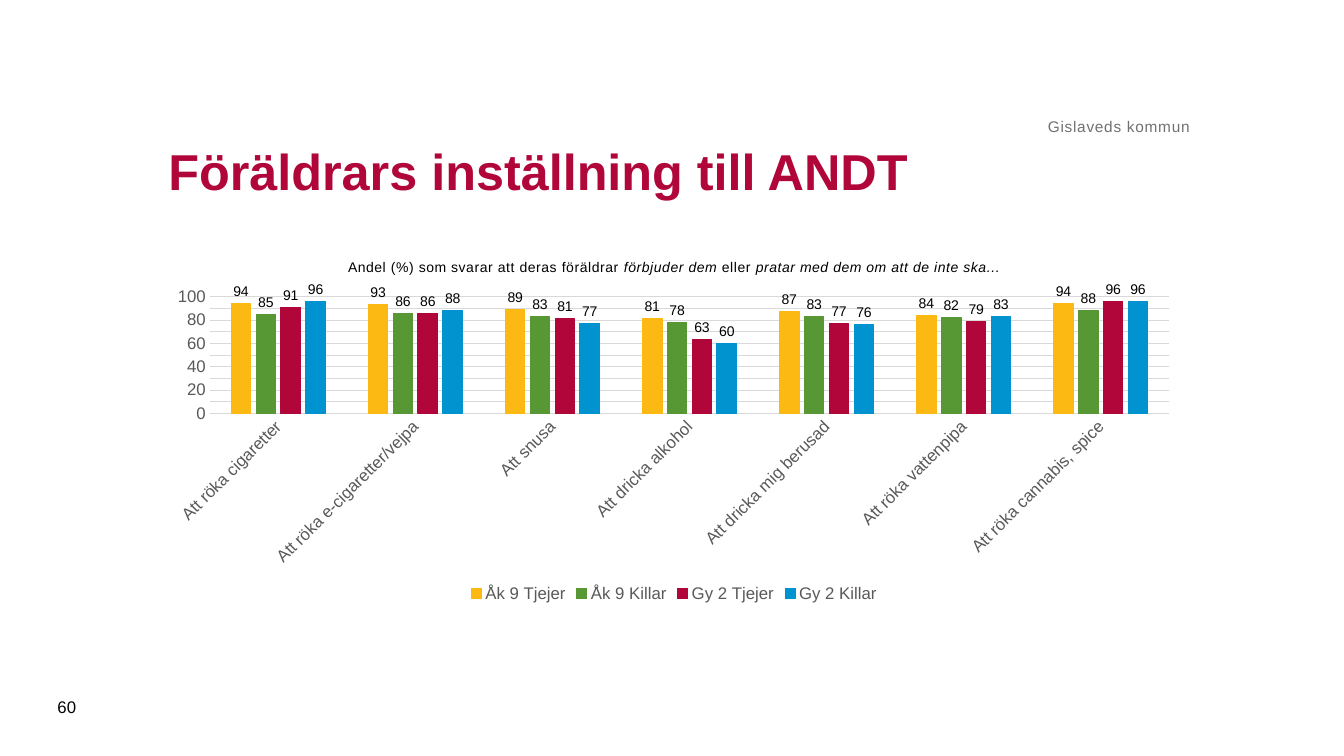
from pptx import Presentation
from pptx.chart.data import CategoryChartData
from pptx.dml.color import RGBColor
from pptx.enum.chart import XL_CHART_TYPE, XL_LABEL_POSITION, XL_LEGEND_POSITION, XL_TICK_MARK
from pptx.enum.text import MSO_ANCHOR, PP_ALIGN
from pptx.oxml import parse_xml
from pptx.oxml.ns import nsdecls
from pptx.util import Pt

COLUMN = XL_CHART_TYPE.COLUMN_CLUSTERED
OUTSIDE = XL_LABEL_POSITION.OUTSIDE_END
BOTTOM = XL_LEGEND_POSITION.BOTTOM
NO_TICK = XL_TICK_MARK.NONE
LEFT, CENTER, RIGHT = PP_ALIGN.LEFT, PP_ALIGN.CENTER, PP_ALIGN.RIGHT
MIDDLE, LOW = MSO_ANCHOR.MIDDLE, MSO_ANCHOR.BOTTOM

# Content
TITLE = "Föräldrars inställning till ANDT"
PLACE = "Gislaveds kommun"
PAGE = "60"
CAPTION = [  # text, italic
    ("Andel (%) som svarar att deras föräldrar ", False),
    ("förbjuder dem", True),
    (" eller ", False),
    ("pratar med dem om att de inte ska...", True),
]
HABITS = ["Att röka cigaretter", "Att röka e-cigaretter/vejpa", "Att snusa",
          "Att dricka alkohol", "Att dricka mig berusad", "Att röka vattenpipa",
          "Att röka cannabis, spice"]
GROUPS = [  # name, colour, values
    ("Åk 9 Tjejer", "FDB913", [94, 93, 89, 81, 87, 84, 94]),
    ("Åk 9 Killar", "579835", [85, 86, 83, 78, 83, 82, 88]),
    ("Gy 2 Tjejer", "B1063A", [91, 86, 81, 63, 77, 79, 96]),
    ("Gy 2 Killar", "0093D0", [96, 88, 77, 60, 76, 83, 96]),
]


class Theme:
    font = "Arial"
    title, axis, place, label = 36, 12, 11, 10
    red, black, grey, soft, rule = "B1063A", "000000", "595959", "717171", "D9D9D9"
    number = "#,##0;#,##0"


# Layout in points: left, top, width, height
SIZE = (960, 540)
EDGE, SPAN = 113, 737
TITLE_BOX = (EDGE, 70.5, SPAN, 102)
PLACE_BOX = (EDGE, 44.5, SPAN, 52.5)
CHART_BOX = (EDGE, 173, SPAN, 260.5)
PAGE_BOX = (34, 490, 41, 29)
PLOT = {"x": 0.05, "y": 0.15, "w": 0.93, "h": 0.32}  # share of the chart


def style(font, size, color, bold=False):
    font.name, font.size, font.bold = Theme.font, Pt(size), bold
    font.color.rgb = RGBColor.from_string(color)


def write(frame, text, size=Theme.axis, color=Theme.black, bold=False,
          align=LEFT, gap=0):
    """Fill a frame with one paragraph; text is a string or (text, italic) pairs."""
    para = frame.paragraphs[0]
    para.alignment = align
    for part, slant in [(text, False)] if isinstance(text, str) else text:
        run = para.add_run()
        run.text = part
        style(run.font, size, color, bold)
        run.font.italic = slant
        if gap:
            run.font._element.set("spc", str(int(gap * 100)))


def place(shape, box):
    shape.left, shape.top, shape.width, shape.height = map(Pt, box)


def add_box(slide, box, anchor, inset=None):
    frame = slide.shapes.add_textbox(*map(Pt, box)).text_frame
    frame.word_wrap, frame.vertical_anchor = True, anchor
    if inset is not None:
        frame.margin_left = frame.margin_right = Pt(inset)
        frame.margin_top = frame.margin_bottom = Pt(inset)
    return frame


def rule(line):
    line.width = Pt(0.75)
    line.color.rgb = RGBColor.from_string(Theme.rule)


def add_chart(slide):
    data = CategoryChartData(number_format=Theme.number)
    data.categories = HABITS
    for name, _, values in GROUPS:
        data.add_series(name, values)
    chart = slide.shapes.add_chart(COLUMN, *map(Pt, CHART_BOX), data).chart
    style(chart.font, Theme.label, Theme.black)

    # Caption and legend
    chart.has_title = True
    write(chart.chart_title.text_frame, CAPTION, size=Theme.label,
          align=CENTER, gap=0.5)
    chart.has_legend = True
    chart.legend.position, chart.legend.include_in_layout = BOTTOM, False
    style(chart.legend.font, Theme.axis, Theme.grey)

    # Axes
    cats, vals = chart.category_axis, chart.value_axis
    for axis in (cats, vals):
        axis.major_tick_mark = axis.minor_tick_mark = NO_TICK
        style(axis.tick_labels.font, Theme.axis, Theme.grey)
    rule(cats.format.line)
    cats._element.txPr.bodyPr.set("rot", "-2700000")
    vals.minimum_scale, vals.maximum_scale, vals.major_unit = 0, 100, 10
    vals.tick_labels.number_format = Theme.number
    vals.tick_labels.number_format_is_linked = False
    vals.format.line.fill.background()
    rule(vals.major_gridlines.format.line)

    # Columns and their values
    plot = chart.plots[0]
    plot.gap_width, plot.overlap, plot.vary_by_categories = 219, -27, False
    for series, (_, color, _) in zip(plot.series, GROUPS):
        paint = RGBColor.from_string(color)
        series.format.fill.solid()
        series.format.fill.fore_color.rgb = paint
        series.format.line.color.rgb = paint
        series.format.line.width = Pt(0.75)
        labels = series.data_labels
        labels.show_value, labels.position = True, OUTSIDE
        labels.number_format, labels.number_format_is_linked = Theme.number, False
        style(labels.font, Theme.label, Theme.black)

    # Plot area
    area = chart._chartSpace.chart.plotArea
    for old in area.findall(area.tag.replace("plotArea", "layout")):
        area.remove(old)
    parts = "".join(f'<c:{key} val="{share}"/>' for key, share in PLOT.items())
    area.insert(0, parse_xml(
        f'<c:layout {nsdecls("c")}><c:manualLayout><c:layoutTarget val="inner"/>'
        f'<c:xMode val="edge"/><c:yMode val="edge"/>{parts}'
        '</c:manualLayout></c:layout>'))


def main():
    deck = Presentation()
    deck.slide_width, deck.slide_height = map(Pt, SIZE)
    slide = deck.slides.add_slide(deck.slide_layouts[5])
    add_chart(slide)

    # Title
    title = slide.shapes.title
    place(title, TITLE_BOX)
    title.text_frame.vertical_anchor = MIDDLE
    write(title.text_frame, TITLE, size=Theme.title, color=Theme.red, bold=True)

    # Place and page number
    write(add_box(slide, PLACE_BOX, LOW, inset=0), PLACE, size=Theme.place,
          color=Theme.soft, align=RIGHT, gap=0.5)
    write(add_box(slide, PAGE_BOX, MIDDLE), PAGE)
    deck.save("out.pptx")


if __name__ == "__main__":
    main()
